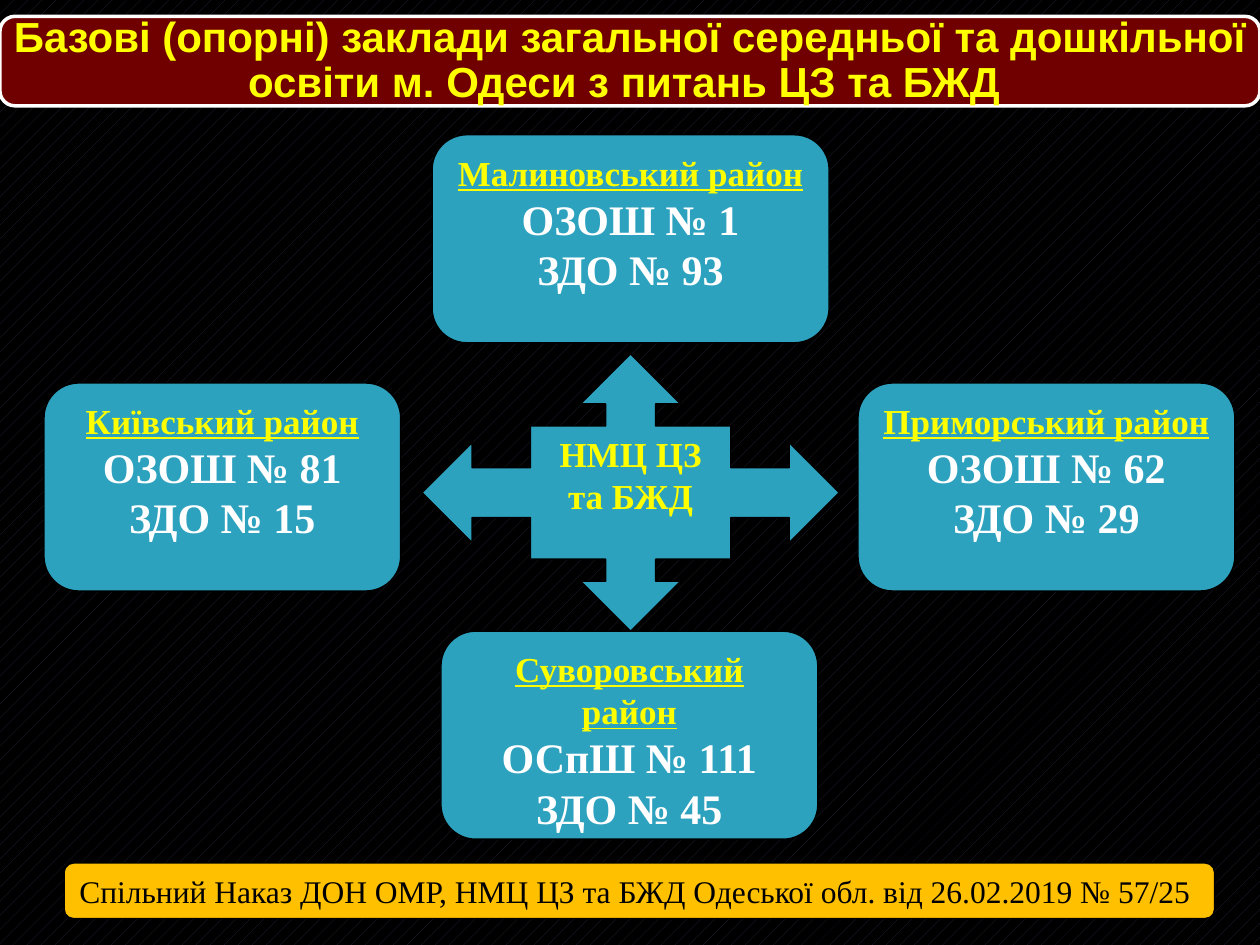
from pptx import Presentation
from pptx.dml.color import RGBColor
from pptx.enum.dml import MSO_PATTERN
from pptx.enum.shapes import MSO_SHAPE as Shape
from pptx.enum.text import MSO_ANCHOR as Anchor, PP_ALIGN as Align
from pptx.util import Inches, Pt

BLACK = RGBColor(0x00, 0x00, 0x00)
WHITE = RGBColor(0xFF, 0xFF, 0xFF)
YELLOW = RGBColor(0xFF, 0xFF, 0x00)
AMBER = RGBColor(0xFF, 0xC0, 0x00)
TEAL = RGBColor(0x2D, 0xA2, 0xBF)
MAROON = RGBColor(0x70, 0x00, 0x00)
NIGHT = RGBColor(0x24, 0x26, 0x3C)

SERIF = "Times New Roman"
CELL = 0.1
COLUMNS, ROWS = 100, 75
DISTRICT_ROWS = 16.5

DISTRICTS = [
    ("Київський район", "ОЗОШ № 81", "ЗДО № 15", 3.5, 30.4, 28.3),
    ("Малиновський район", "ОЗОШ № 1", "ЗДО № 93", 34.3, 10.7, 31.5),
    ("Приморський район", "ОЗОШ № 62", "ЗДО № 29", 68.1, 30.4, 29.9),
    ("Суворовський район", "ОСпШ № 111", "ЗДО № 45", 35, 50.1, 29.9),
]


def grid(*cells):
    return [Inches(cell * CELL) for cell in cells]


def paint_background(page):
    fill = page.background.fill
    fill.patterned()
    fill.pattern = MSO_PATTERN.PERCENT_10
    fill.fore_color.rgb = NIGHT
    fill.back_color.rgb = BLACK


def add_box(shapes, kind, area, color, border=BLACK, width=0.75):
    box = shapes.add_shape(kind, *grid(*area))
    box.shadow.inherit = False
    box.fill.solid()
    box.fill.fore_color.rgb = color
    box.line.color.rgb = border
    box.line.width = Pt(width)
    return box


def style(para, size, color, font=SERIF, bold=True, underline=False, align=Align.CENTER):
    para.alignment = align
    for span in para.runs:
        span.font.name = font
        span.font.size = Pt(size)
        span.font.bold = bold
        span.font.underline = underline
        span.font.color.rgb = color


def write(box, text, anchor=Anchor.TOP):
    frame = box.text_frame
    frame.word_wrap = True
    frame.vertical_anchor = anchor
    frame.text = text
    return frame.paragraphs


def add_title(page, text):
    banner = page.shapes.add_group_shape().shapes
    add_box(banner, Shape.ROUNDED_RECTANGLE, (0, 1.3, COLUMNS, 7.1), MAROON, WHITE, 2)
    label = banner.add_textbox(*grid(0.3, 2.7, COLUMNS - 0.6, 4.3))
    frame = label.text_frame
    frame.margin_left = frame.margin_right = Inches(0.08)
    frame.margin_top = frame.margin_bottom = Inches(0.08)
    para = write(label, text, Anchor.MIDDLE)[0]
    para.line_spacing = 0.9
    style(para, 24, YELLOW, font="Arial")


def add_hub(page, text):
    hub = add_box(page.shapes, Shape.QUAD_ARROW_CALLOUT, (33.5, 28.1, 33.1, 22), TEAL)
    for index, share in enumerate((0.18, 0.18, 0.18, 0.48)):
        hub.adjustments[index] = share
    style(write(hub, text)[0], 20, YELLOW)


def add_district(page, name, school, nursery, column, row, columns):
    area = (column, row, columns, DISTRICT_ROWS)
    box = add_box(page.shapes, Shape.ROUNDED_RECTANGLE, area, TEAL)
    heading, *places = write(box, "\n".join((name, school, nursery)))
    style(heading, 20, YELLOW, underline=True)
    for para in places:
        style(para, 24, WHITE)


def add_footer(page, text):
    box = add_box(page.shapes, Shape.ROUNDED_RECTANGLE, (5.1, 68.5, 91.3, 4.4), AMBER)
    para = write(box, text, Anchor.MIDDLE)[0]
    style(para, 18, BLACK, bold=False, align=Align.LEFT)


def main():
    deck = Presentation()
    deck.slide_width, deck.slide_height = grid(COLUMNS, ROWS)
    page = deck.slides.add_slide(deck.slide_layouts[6])
    paint_background(page)
    add_title(page, "Базові (опорні) заклади загальної середньої та дошкільної освіти м. Одеси з питань ЦЗ та БЖД ")
    add_hub(page, "НМЦ ЦЗ та БЖД")
    for district in DISTRICTS:
        add_district(page, *district)
    add_footer(page, "Спільний Наказ ДОН ОМР, НМЦ ЦЗ та БЖД Одеської обл. від 26.02.2019 № 57/25")
    deck.save("out.pptx")


if __name__ == "__main__":
    main()
